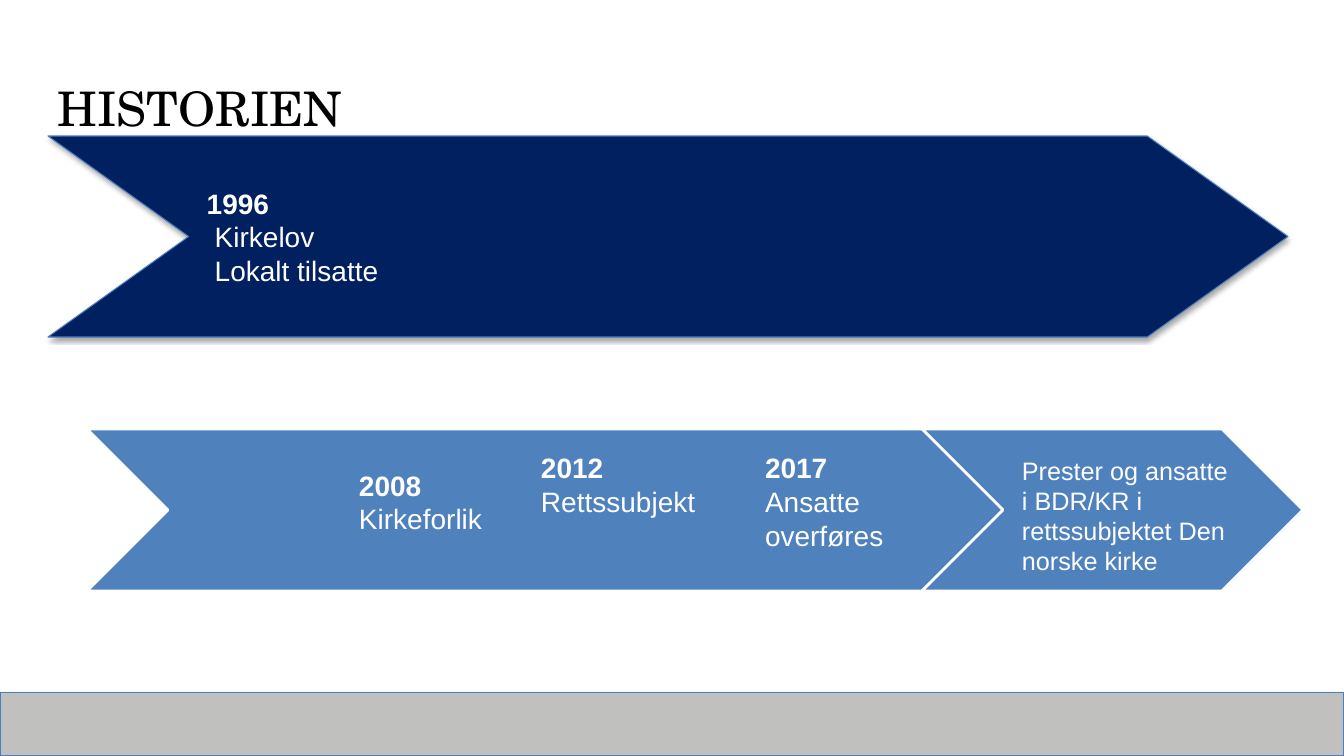
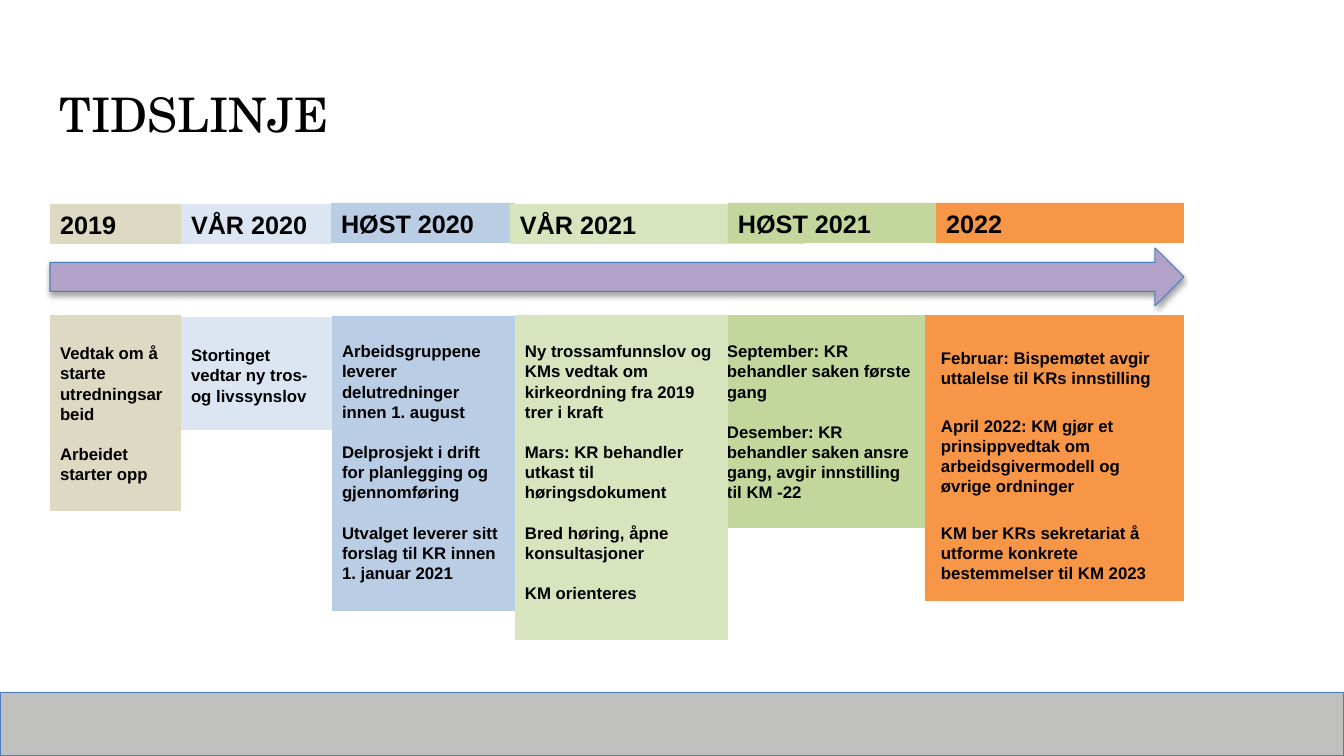
from lxml import etree
from pptx import Presentation
from pptx import util as u
from pptx.dml.color import RGBColor
from pptx.enum import shapes, text
from pptx.oxml import ns

WIDTH, HEIGHT = 1344, 756
SCALE = 12192000 / WIDTH
BODY_FONT, TITLE_FONT = "Arial", "TeX Gyre Schola"
BLACK, WHITE = "000000", "FFFFFF"
OUTLINE, BAND, NAVY, BLUE, PURPLE = "4B7EBC", "C0C1BF", "002060", "4F81BD", "B3A2C7"
INSET = (10, 5, 10, 5)
LEADING = 1.2

FIRST_STAGE = ["1996", "Kirkelov", "Lokalt tilsatte"]
CHEVRONS = [(87, 429, 918, 162), (922, 429, 381, 162)]
MILESTONES = [
    ((349, 463, 183, 78), ["2008", "Kirkeforlik"]),
    ((531, 446, 183, 78), ["2012", "Rettssubjekt"]),
    ((755, 446, 183, 112), ["2017", "Ansatte overføres"]),
]
RESULT = "Prester og ansatte i BDR/KR i rettssubjektet Den norske kirke"

PERIODS = [
    {"name": "2019", "colour": "DDD9C3", "header": (50, 204, 131, 40),
     "box": (50, 315, 131, 196), "inset": (10, 28), "gap": 14.4,
     "steps": ["Vedtak om å starte utredningsarbeid", "Arbeidet starter opp"]},
    {"name": "VÅR 2020", "colour": "DCE6F2", "header": (181, 204, 151, 40),
     "box": (181, 317, 151, 113), "inset": (10, 28), "gap": 14.4,
     "steps": ["Stortinget vedtar ny tros- og livssynslov"]},
    {"name": "HØST 2020", "colour": "B9CDE5", "header": (331, 203, 184, 40),
     "box": (332, 316, 183, 295), "inset": (10, 25), "gap": 14.4,
     "steps": ["Arbeidsgruppene leverer delutredninger innen 1. august",
               "Delprosjekt i drift for planlegging og gjennomføring",
               "Utvalget leverer sitt forslag til KR innen 1. januar 2021"]},
    {"name": "VÅR 2021", "colour": "D7E4BD", "header": (510, 204, 294, 40),
     "box": (515, 315, 213, 325), "inset": (10, 26), "gap": 14.4,
     "steps": ["Ny trossamfunnslov og KMs vedtak om kirkeordning fra 2019 trer i kraft",
               "Mars: KR behandler utkast til høringsdokument",
               "Bred høring, åpne konsultasjoner", "KM orienteres"]},
    {"name": "HØST 2021", "colour": "C3D69B", "header": (728, 203, 208, 40),
     "box": (717, 315, 208, 213), "inset": (10, 26), "gap": 14.4,
     "steps": ["September: KR behandler saken første gang",
               "Desember: KR behandler saken ansre gang, avgir innstilling til KM -22"]},
    {"name": "2022", "colour": "F79646", "header": (936, 203, 248, 40),
     "box": (925, 315, 259, 286), "inset": (16, 33), "gap": 19.2,
     "steps": ["Februar: Bispemøtet avgir uttalelse til KRs innstilling",
               "April 2022: KM gjør et prinsippvedtak om arbeidsgivermodell og øvrige ordninger",
               "KM ber KRs sekretariat å utforme konkrete bestemmelser til KM 2023"]},
]


def px(value):
    return u.Emu(round(value * SCALE))


def colour(value):
    return RGBColor.from_string(value)


def add_shadow(shape):
    effects = shape._element.spPr.find(ns.qn("a:effectLst"))
    shadow = etree.SubElement(effects, ns.qn("a:outerShdw"), blurRad="40000",
                              dist="23000", dir="5400000", rotWithShape="0")
    tint = etree.SubElement(shadow, ns.qn("a:srgbClr"), val=BLACK)
    etree.SubElement(tint, ns.qn("a:alpha"), val="35000")


def add_block(slide, kind, box, fill, line=None, line_width=0.75, shadow=False):
    shape = slide.shapes.add_shape(kind, *map(px, box))
    shape.shadow.inherit = False
    shape.fill.solid()
    shape.fill.fore_color.rgb = colour(fill)
    if line:
        shape.line.color.rgb = colour(line)
        shape.line.width = u.Pt(line_width)
    else:
        shape.line.fill.background()
    if shadow:
        add_shadow(shape)
    return shape


def add_textbox(slide, box):
    return slide.shapes.add_textbox(*map(px, box))


def write(shape, lines, size, ink, bold=(), inset=INSET, gap=0, font=BODY_FONT,
          anchor=text.MSO_ANCHOR.TOP):
    frame = shape.text_frame
    frame.word_wrap = True
    frame.vertical_anchor = anchor
    frame.margin_left, frame.margin_top, frame.margin_right, frame.margin_bottom = map(px, inset)
    frame.text = "\n".join(lines)
    for index, paragraph in enumerate(frame.paragraphs):
        paragraph.alignment = text.PP_ALIGN.LEFT
        if font == BODY_FONT:
            paragraph.line_spacing = u.Pt(size * LEADING)
        if index and gap:
            paragraph.space_before = u.Pt(gap)
        for run in paragraph.runs:
            run.font.name = font
            run.font.size = u.Pt(size)
            run.font.bold = index in bold
            run.font.color.rgb = colour(ink)
    return frame


def add_slide(presentation, title, title_box):
    slide = presentation.slides.add_slide(presentation.slide_layouts[6])
    add_block(slide, shapes.MSO_SHAPE.RECTANGLE, (0, 693, WIDTH, 63), BAND, OUTLINE, shadow=True)
    write(add_textbox(slide, title_box), [title], 34, BLACK, font=TITLE_FONT)
    return slide


def build_history(presentation):
    slide = add_slide(presentation, "HISTORIEN", (48, 74, 1210, 103))
    for box in CHEVRONS:
        add_block(slide, shapes.MSO_SHAPE.CHEVRON, box, BLUE, WHITE, 2)
    for box, lines in MILESTONES:
        write(add_textbox(slide, box), lines, 20, WHITE, bold=(0,))
    write(add_textbox(slide, (1012, 450, 234, 131)), [RESULT], 18, WHITE)
    stage = add_block(slide, shapes.MSO_SHAPE.CHEVRON, (48, 136, 1240, 201), NAVY, OUTLINE, shadow=True)
    stage.adjustments[0] = 0.7
    frame = write(stage, FIRST_STAGE, 20, WHITE, bold=(0,), inset=(18, 5, 10, 5),
                  anchor=text.MSO_ANCHOR.MIDDLE)
    for paragraph in frame.paragraphs[1:]:
        paragraph._p.get_or_add_pPr().set("marL", str(px(8)))


def build_timeline(presentation):
    slide = add_slide(presentation, "TIDSLINJE", (50, 80, 933, 103))
    rectangle = shapes.MSO_SHAPE.RECTANGLE
    for period in reversed(PERIODS):
        column = add_block(slide, rectangle, period["box"], period["colour"])
        steps = period["steps"]
        write(column, steps, 12, BLACK, bold=range(len(steps)),
              inset=(*period["inset"], 10, 5), gap=period["gap"])
    add_block(slide, shapes.MSO_SHAPE.RIGHT_ARROW, (50, 248, 1134, 58), PURPLE, OUTLINE, shadow=True)
    for period in PERIODS:
        header = add_block(slide, rectangle, period["header"], period["colour"])
        write(header, [period["name"]], 18, BLACK, bold=(0,))


def main():
    presentation = Presentation()
    presentation.slide_width, presentation.slide_height = px(WIDTH), px(HEIGHT)
    build_history(presentation)
    build_timeline(presentation)
    presentation.save("out.pptx")


if __name__ == "__main__":
    main()
